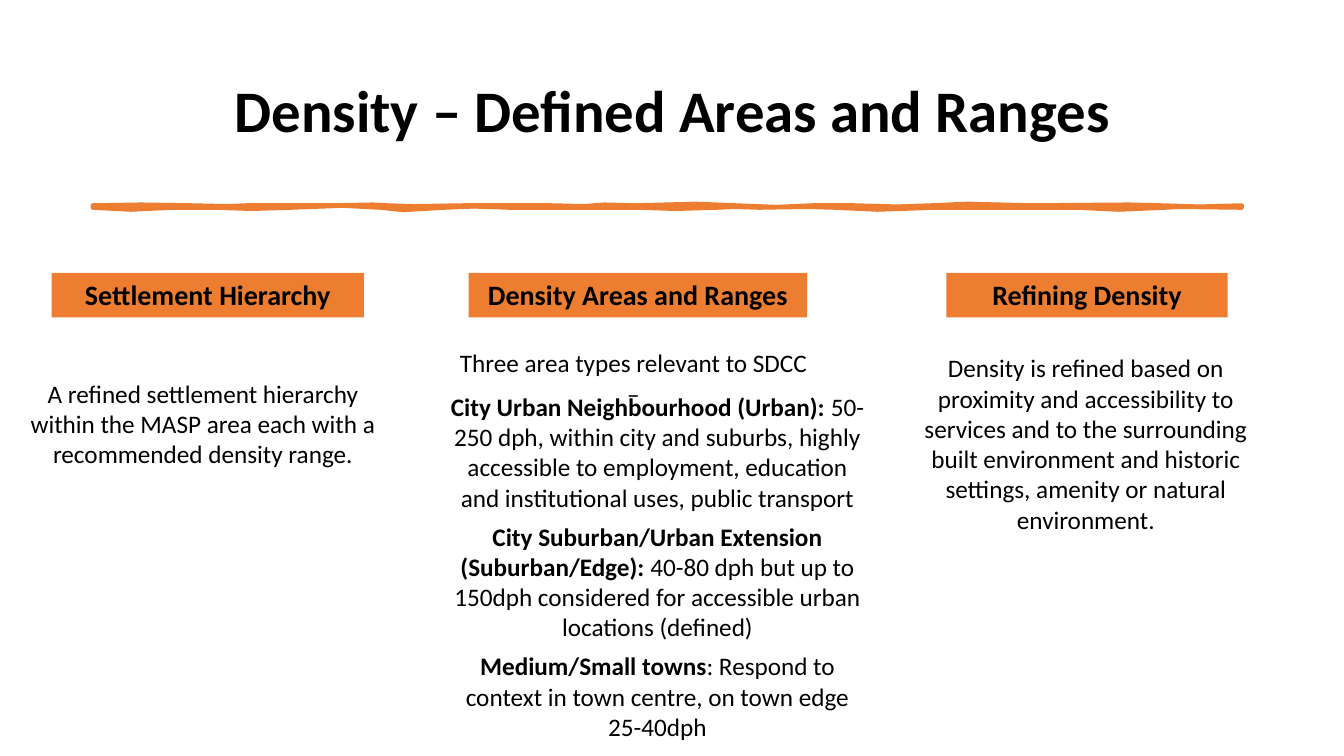
from pptx import Presentation
from pptx.dml.color import RGBColor
from pptx.enum.shapes import MSO_SHAPE
from pptx.enum.text import MSO_ANCHOR, MSO_AUTO_SIZE, PP_ALIGN
from pptx.util import Cm, Pt

ORANGE = "ED7D31"
BLACK = "000000"
HEADER_TOP, HEADER_HEIGHT = 6.88, 1.12
TITLE_BOX = (2.34, 1.02, 29.21, 3.68)

RULE_TOP = [
    (234, 518), (356, 516), (483, 518), (572, 520), (620, 518), (841, 518),
    (940, 516), (975, 518), (1041, 520), (1168, 518), (1392, 518), (1473, 520),
    (1496, 518), (1524, 516), (1603, 518), (1753, 514), (1854, 518), (1956, 522),
    (2047, 518), (2154, 518), (2261, 521), (2347, 518), (2438, 514), (2598, 518),
    (2845, 516), (2926, 518), (3023, 521), (3129, 518),
]
RULE_BOTTOM = [
    (3129, 523), (2972, 521), (2936, 523), (2819, 528), (2713, 523), (2492, 523),
    (2357, 523), (2210, 528), (2106, 523), (2032, 521), (1913, 523), (1854, 521),
    (1806, 523), (1702, 526), (1613, 523), (1448, 523), (1285, 523), (1194, 520),
    (1120, 523), (1016, 529), (958, 523), (864, 518), (734, 523), (635, 526),
    (541, 523), (434, 523), (330, 528), (234, 523),
]

COLUMNS = [
    {
        "header": ("Settlement Hierarchy", 1.3, 7.87),
        "bodies": [
            ((0.53, 9.53, 9.17, 0.13), [
                [("A refined settlement hierarchy within the MASP area each "
                  "with a recommended density range.", False)],
            ]),
        ],
    },
    {
        "header": ("Density Areas and Ranges", 11.81, 8.53),
        "bodies": [
            ((11.38, 8.76, 9.17, 0.3), [
                [("Three area types relevant to SDCC –", False)],
            ]),
            ((11.3, 9.86, 10.54, 2.84), [
                [("City Urban Neighbourhood (Urban): ", True),
                 ("50-250 dph, within city and suburbs, highly accessible to "
                  "employment, education and institutional uses, public transport",
                  False)],
                [("City Suburban/Urban Extension (Suburban/Edge): ", True),
                 ("40-80 dph but up to 150dph considered for accessible urban "
                  "locations (defined)", False)],
                [("Medium/Small towns", True),
                 (": Respond to context in town centre, on town edge 25-40dph",
                  False)],
            ]),
        ],
    },
    {
        "header": ("Refining Density", 23.85, 7.09),
        "bodies": [
            ((22.78, 8.89, 9.17, 0.64), [
                [("Density is refined based on proximity and accessibility to "
                  "services and to the surrounding built environment and historic "
                  "settings, amenity or natural environment.", False)],
            ]),
        ],
    },
]


def color(value):
    """Return the colour for a hex string."""
    return RGBColor.from_string(value)


def apply_format(target, values):
    """Set each attribute named in values on target."""
    for name, value in values.items():
        setattr(target, name, value)


def write_text(shape, paragraphs, size, paragraph_format, frame_format):
    """Fill a shape with centred paragraphs made of (text, bold) runs."""
    frame = shape.text_frame
    apply_format(frame, {"word_wrap": True, **frame_format})
    for index, runs in enumerate(paragraphs):
        paragraph = frame.add_paragraph() if index else frame.paragraphs[0]
        apply_format(paragraph, {"alignment": PP_ALIGN.CENTER, **paragraph_format})
        for text, bold in runs:
            run = paragraph.add_run()
            run.text = text
            apply_format(run.font, {"name": "Calibri", "size": Pt(size), "bold": bold})
            run.font.color.rgb = color(BLACK)


def add_title(slide, box):
    """Place and format the title placeholder."""
    title = slide.shapes.title
    sides = ("left", "top", "width", "height")
    apply_format(title, {side: Cm(value) for side, value in zip(sides, box)})
    write_text(title, [[("Density – Defined Areas and Ranges", True)]], 42,
               {"line_spacing": 0.9, "space_before": Pt(0), "space_after": Pt(6)},
               {"vertical_anchor": MSO_ANCHOR.MIDDLE, "auto_size": MSO_AUTO_SIZE.NONE})


def add_rule(slide):
    """Draw the hand-drawn rule under the title."""
    start, *points = RULE_TOP + RULE_BOTTOM
    builder = slide.shapes.build_freeform(*start, scale=Cm(0.01))
    builder.add_line_segments(points, close=True)
    rule = builder.convert_to_shape()
    rule.shadow.inherit = False
    rule.fill.solid()
    rule.fill.fore_color.rgb = color(ORANGE)
    rule.line.color.rgb = color(ORANGE)
    rule.line.width = Pt(3.25)


def add_header(slide, text, left, width):
    """Draw the orange header of a column."""
    header = slide.shapes.add_shape(
        MSO_SHAPE.RECTANGLE, Cm(left), Cm(HEADER_TOP), Cm(width), Cm(HEADER_HEIGHT))
    header.shadow.inherit = False
    header.fill.solid()
    header.fill.fore_color.rgb = color(ORANGE)
    header.line.fill.background()
    write_text(header, [[(text, True)]], 20, {},
               {"vertical_anchor": MSO_ANCHOR.TOP,
                "auto_size": MSO_AUTO_SIZE.SHAPE_TO_FIT_TEXT})


def add_body(slide, box, paragraphs):
    """Add a text block without margins in the given box."""
    body = slide.shapes.add_textbox(*(Cm(value) for value in box))
    margins = {f"margin_{side}": 0 for side in ("left", "top", "right", "bottom")}
    write_text(body, paragraphs, 18, {"space_after": Pt(6.3)},
               {"vertical_anchor": MSO_ANCHOR.TOP, **margins})


def add_column(slide, column):
    """Add one column with its header and text blocks."""
    for box, paragraphs in column["bodies"]:
        add_body(slide, box, paragraphs)
    add_header(slide, *column["header"])


def main():
    """Build and save the presentation."""
    presentation = Presentation()
    apply_format(presentation, {"slide_width": Cm(33.87), "slide_height": Cm(19.05)})
    slide = presentation.slides.add_slide(presentation.slide_layouts[5])
    add_title(slide, TITLE_BOX)
    add_rule(slide)
    for column in COLUMNS:
        add_column(slide, column)
    presentation.save("out.pptx")


if __name__ == "__main__":
    main()
